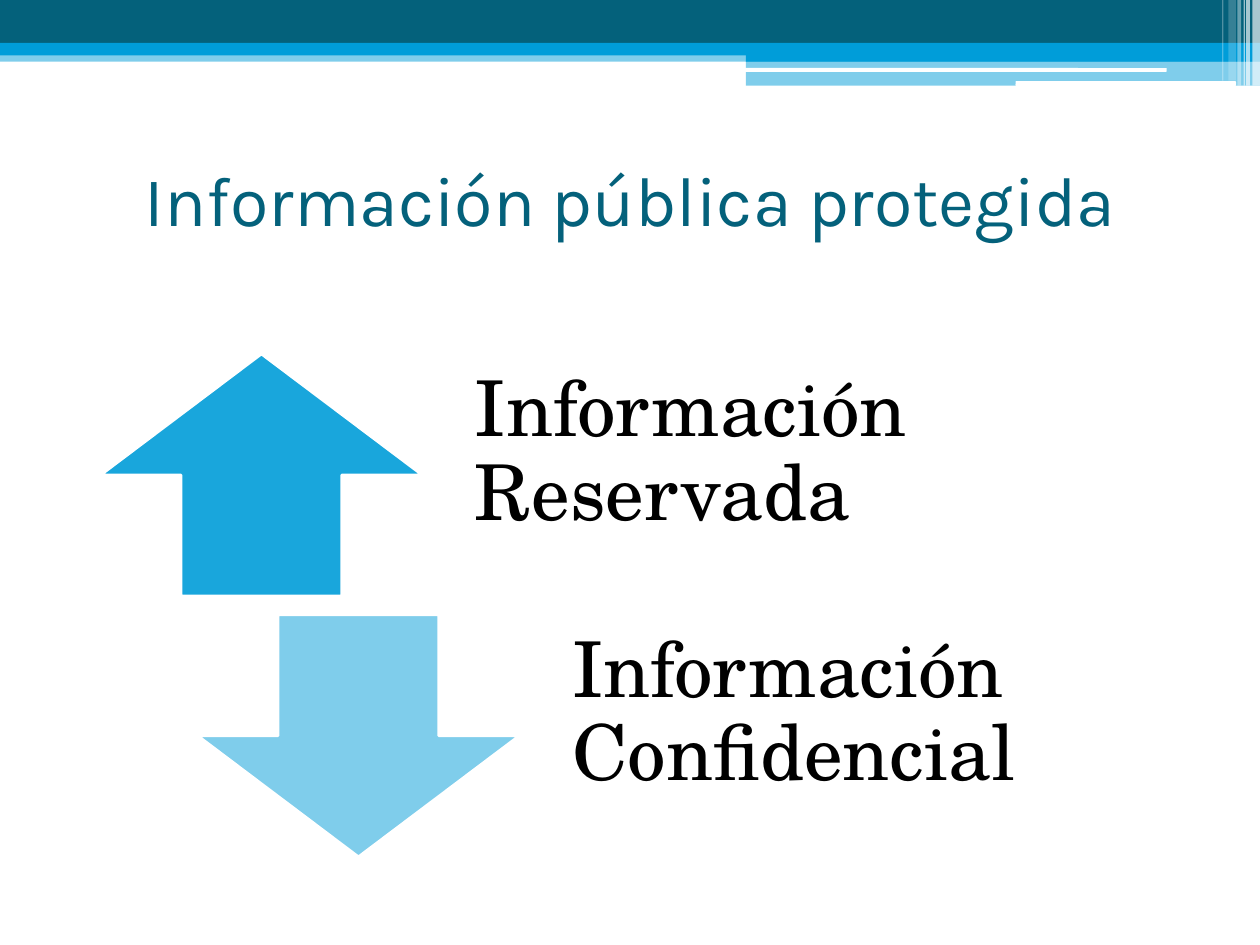
import dataclasses

import pptx
import pptx.dml.color
import pptx.enum.shapes
import pptx.enum.text
import pptx.oxml
import pptx.oxml.ns
import pptx.util

Pt = pptx.util.Pt
SHAPE = pptx.enum.shapes.MSO_SHAPE
ALIGN = pptx.enum.text.PP_ALIGN


@dataclasses.dataclass(frozen=True)
class Theme:
    dark: str = "04617B"
    accent: str = "009DD9"
    white: str = "FFFFFF"
    black: str = "000000"
    title_font: str = "Karla"
    label_font: str = "TeX Gyre Schola"
    title_size: int = 40
    label_size: int = 44


THEME = Theme()
WIDTH, HEIGHT = 720, 540

# left, top, width, height, colour, opacity in percent
BANDS = [
    (0, 28.8, WIDTH, 6.48, THEME.accent, 50),
    (0, 0, WIDTH, 24.48, THEME.dark, 100),
    (0, 24.48, WIDTH, 7.2, THEME.accent, 100),
    (426.24, 28.08, 293.76, 7.2, THEME.accent, 100),
    (426.24, 34.8, 293.76, 14.16, THEME.accent, 50),
]
# left, top, width, height
ROUNDED_LINES = [(425.52, 38.88, 241.2, 2.16), (580.32, 46.4, 126, 2.7)]
# left, width, height, opacity in percent
STRIPES = [
    (715.68, 4.32, 48.96, 65),
    (712.08, 2.16, 48.96, 65),
    (710.64, 0.72, 48.96, 60),
    (707.04, 2.16, 48.96, 40),
    (702, 4.32, 46.08, 20),
    (698.4, 0.72, 46.08, 30),
]
CATEGORIES = [
    (SHAPE.UP_ARROW, 90, "Información Reservada"),
    (SHAPE.DOWN_ARROW, 50, "Información Confidencial"),
]


def rgb(colour):
    return pptx.dml.color.RGBColor.from_string(colour)


def add_filled(slide, preset, box, colour, opacity=100):
    shape = slide.shapes.add_shape(preset, *map(Pt, box))
    shape.shadow.inherit = False
    shape.fill.solid()
    shape.fill.fore_color.rgb = rgb(colour)
    shape.line.fill.background()
    if opacity < 100:
        fill_colour = shape.fill._xPr.find(".//" + pptx.oxml.ns.qn("a:srgbClr"))
        alpha = pptx.oxml.parse_xml(
            f'<a:alpha {pptx.oxml.ns.nsdecls("a")} val="{opacity * 1000}"/>')
        fill_colour.append(alpha)
    return shape


def add_text(slide, box, text, font, size, colour, align=ALIGN.LEFT):
    frame = slide.shapes.add_textbox(*map(Pt, box)).text_frame
    frame.word_wrap = True
    frame.vertical_anchor = pptx.enum.text.MSO_ANCHOR.MIDDLE
    frame.text = text
    paragraph = frame.paragraphs[0]
    paragraph.alignment = align
    run_font = paragraph.runs[0].font
    run_font.name = font
    run_font.size = Pt(size)
    run_font.color.rgb = rgb(colour)
    return frame


def add_header(slide):
    for *box, colour, opacity in BANDS:
        add_filled(slide, SHAPE.RECTANGLE, box, colour, opacity)
    for box in ROUNDED_LINES:
        add_filled(slide, SHAPE.ROUNDED_RECTANGLE, box, THEME.white)
    for left, width, height, opacity in STRIPES:
        add_filled(slide, SHAPE.RECTANGLE, (left, 0, width, height),
                   THEME.white, opacity)


def add_category(slide, index, preset, opacity, text):
    """Place an arrow and its label one step right and down per index."""
    left, top = 57.6 + index * 55.44, 202.3 + index * 149.04
    arrow = add_filled(slide, preset, (left, top, 183.6, 138.24),
                       THEME.accent, opacity)
    arrow.line.color.rgb = rgb(THEME.white)
    arrow.line.width = Pt(1.5)

    label = add_text(slide, (left + 189.36, top, 349.92, 138.24), text,
                     THEME.label_font, THEME.label_size, THEME.black)
    label.margin_left = label.margin_right = label.margin_bottom = Pt(24.48)
    label.margin_top = 0
    label.paragraphs[0].line_spacing = 0.9


def main():
    deck = pptx.Presentation()
    deck.slide_width, deck.slide_height = Pt(WIDTH), Pt(HEIGHT)
    slide = deck.slides.add_slide(deck.slide_layouts[6])
    add_header(slide)
    for index, category in enumerate(CATEGORIES):
        add_category(slide, index, *category)
    add_text(slide, (36, 71.28, 648, 84.24), "Información pública protegida",
             THEME.title_font, THEME.title_size, THEME.dark, ALIGN.CENTER)
    deck.save("out.pptx")


if __name__ == "__main__":
    main()
